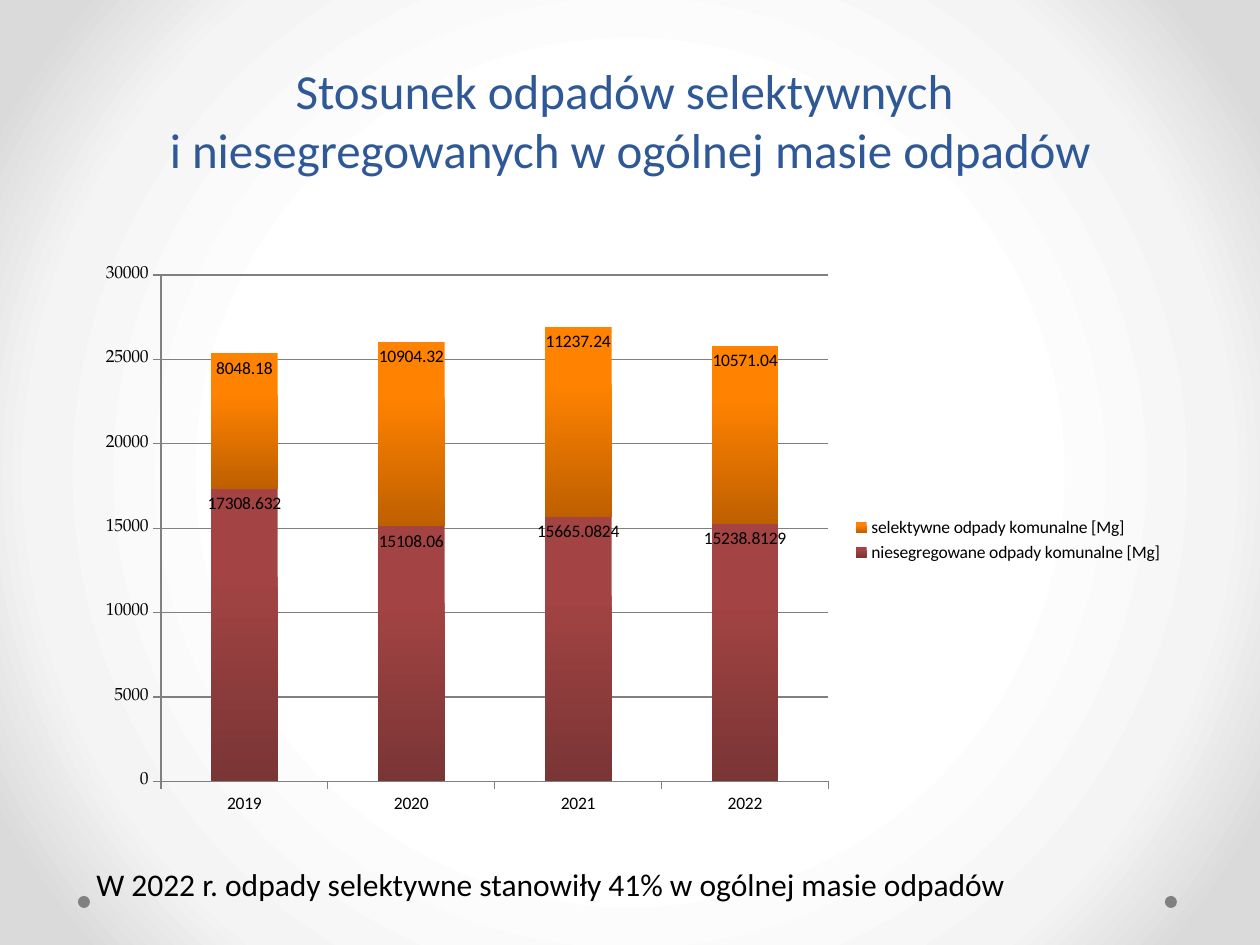
from lxml import etree
from pptx import Presentation
from pptx.chart.data import CategoryChartData
from pptx.dml.color import RGBColor
from pptx.enum.chart import XL_CHART_TYPE, XL_LABEL_POSITION, XL_LEGEND_POSITION, XL_TICK_MARK
from pptx.enum.shapes import MSO_SHAPE
from pptx.enum.text import MSO_ANCHOR, MSO_AUTO_SIZE, PP_ALIGN
from pptx.oxml.ns import qn
from pptx.util import Emu, Pt

PX = 914400 // 126
STACKED = XL_CHART_TYPE.COLUMN_STACKED
INSIDE_END = XL_LABEL_POSITION.INSIDE_END
RIGHT = XL_LEGEND_POSITION.RIGHT
OUTSIDE = XL_TICK_MARK.OUTSIDE
CENTER = PP_ALIGN.CENTER
BOTTOM = MSO_ANCHOR.BOTTOM
OVAL = MSO_SHAPE.OVAL

BLACK = RGBColor(0x00, 0x00, 0x00)
WHITE = RGBColor(0xFF, 0xFF, 0xFF)
PALE = RGBColor(0xF4, 0xF4, 0xF4)
SILVER = RGBColor(0xDA, 0xDA, 0xDA)
GRAY = RGBColor(0x80, 0x80, 0x80)
BLUE = RGBColor(0x2F, 0x58, 0x97)
RED = RGBColor(0xA3, 0x43, 0x43)
DARK_RED = RGBColor(0x7A, 0x35, 0x35)
ORANGE = RGBColor(0xFF, 0x82, 0x00)
DARK_ORANGE = RGBColor(0xBF, 0x60, 0x00)

SANS = "Calibri"
SERIF = "TeX Gyre Pagella"

YEARS = ["2019", "2020", "2021", "2022"]
WASTE = [
    ("niesegregowane odpady komunalne [Mg]",
     [17308.632, 15108.06, 15665.0824, 15238.8129], RED, DARK_RED),
    ("selektywne odpady komunalne [Mg]",
     [8048.18, 10904.32, 11237.24, 10571.04], ORANGE, DARK_ORANGE),
]


def px(*lengths):
    return [Emu(length * PX) for length in lengths]


def style_font(font, size, color=BLACK, name=SANS):
    font.size = Pt(size)
    font.name = name
    font.color.rgb = color


def set_gradient(fill, owner, stops, radial=False):
    """Give fill, held by the XML element owner, stops of (percent, colour)."""
    fill.gradient()
    gradient = next(owner.iter(qn("a:gradFill")))
    for child in list(gradient):
        gradient.remove(child)
    stop_list = etree.SubElement(gradient, qn("a:gsLst"))
    for percent, color in stops:
        stop = etree.SubElement(stop_list, qn("a:gs"), pos=str(percent * 1000))
        etree.SubElement(stop, qn("a:srgbClr"), val=str(color))
    if radial:
        shade = etree.SubElement(gradient, qn("a:path"))
        shade.set("path", "circle")
        center = {side: "50000" for side in "ltrb"}
        etree.SubElement(shade, qn("a:fillToRect"), center)
    else:
        etree.SubElement(gradient, qn("a:lin"), ang="5400000", scaled="0")


def add_dot(page, left, top):
    dot = page.shapes.add_shape(OVAL, *px(left, top, 12, 12))
    dot.shadow.inherit = False
    dot.fill.solid()
    dot.fill.fore_color.rgb = GRAY
    dot.line.fill.background()


def fill_title(page, text):
    title = page.shapes.title
    title.left, title.top, title.width, title.height = px(63, 0, 1134, 185)
    frame = title.text_frame
    frame.auto_size = MSO_AUTO_SIZE.NONE
    frame.vertical_anchor = BOTTOM
    paragraph = frame.paragraphs[0]
    paragraph.text = text
    paragraph.alignment = CENTER
    for span in paragraph.runs:
        style_font(span.font, 28, BLUE)


def add_note(page, text):
    box = page.shapes.add_textbox(*px(84, 859, 1012, 50))
    frame = box.text_frame
    frame.word_wrap = True
    frame.text = text
    style_font(frame.paragraphs[0].runs[0].font, 18)


def style_axis(axis, font_name):
    axis.major_tick_mark = OUTSIDE
    axis.format.line.color.rgb = GRAY
    style_font(axis.tick_labels.font, 10, name=font_name)


def style_series(series, light, dark):
    set_gradient(series.format.fill, series._element,
                 [(0, light), (30, light), (100, dark)])
    labels = series.data_labels
    labels.show_value = True
    labels.position = INSIDE_END
    style_font(labels.font, 10)


def add_waste_chart(page):
    data = CategoryChartData()
    data.categories = YEARS
    for name, values, _, _ in WASTE:
        data.add_series(name, values)
    chart = page.shapes.add_chart(STACKED, *px(84, 255, 1092, 570), data).chart
    style_font(chart.font, 10, name=SERIF)
    chart.has_title = False
    chart.has_legend = True
    chart.legend.position = RIGHT
    chart.legend.include_in_layout = False
    style_font(chart.legend.font, 10)

    style_axis(chart.category_axis, SANS)
    style_axis(chart.value_axis, SERIF)
    chart.value_axis.maximum_scale = 30000
    chart.value_axis.minimum_scale = 0
    chart.value_axis.major_unit = 5000
    chart.value_axis.major_gridlines.format.line.color.rgb = GRAY

    plot = chart.plots[0]
    plot.gap_width = 150
    plot.overlap = 100
    for series, (_, _, light, dark) in zip(plot.series, WASTE):
        style_series(series, light, dark)


def main():
    deck = Presentation()
    deck.slide_width, deck.slide_height = px(1260, 945)
    page = deck.slides.add_slide(deck.slide_layouts[5])
    set_gradient(page.background.fill, page.element,
                 [(0, WHITE), (50, WHITE), (76, PALE), (92, SILVER), (100, SILVER)],
                 radial=True)
    for left in (78, 1165):
        add_dot(page, left, 896)
    fill_title(page, "Stosunek odpadów selektywnych \n"
                     "i niesegregowanych w ogólnej masie odpadów")
    add_waste_chart(page)
    add_note(page, "W 2022 r. odpady selektywne stanowiły 41% w ogólnej masie odpadów")
    deck.save("out.pptx")


if __name__ == "__main__":
    main()
